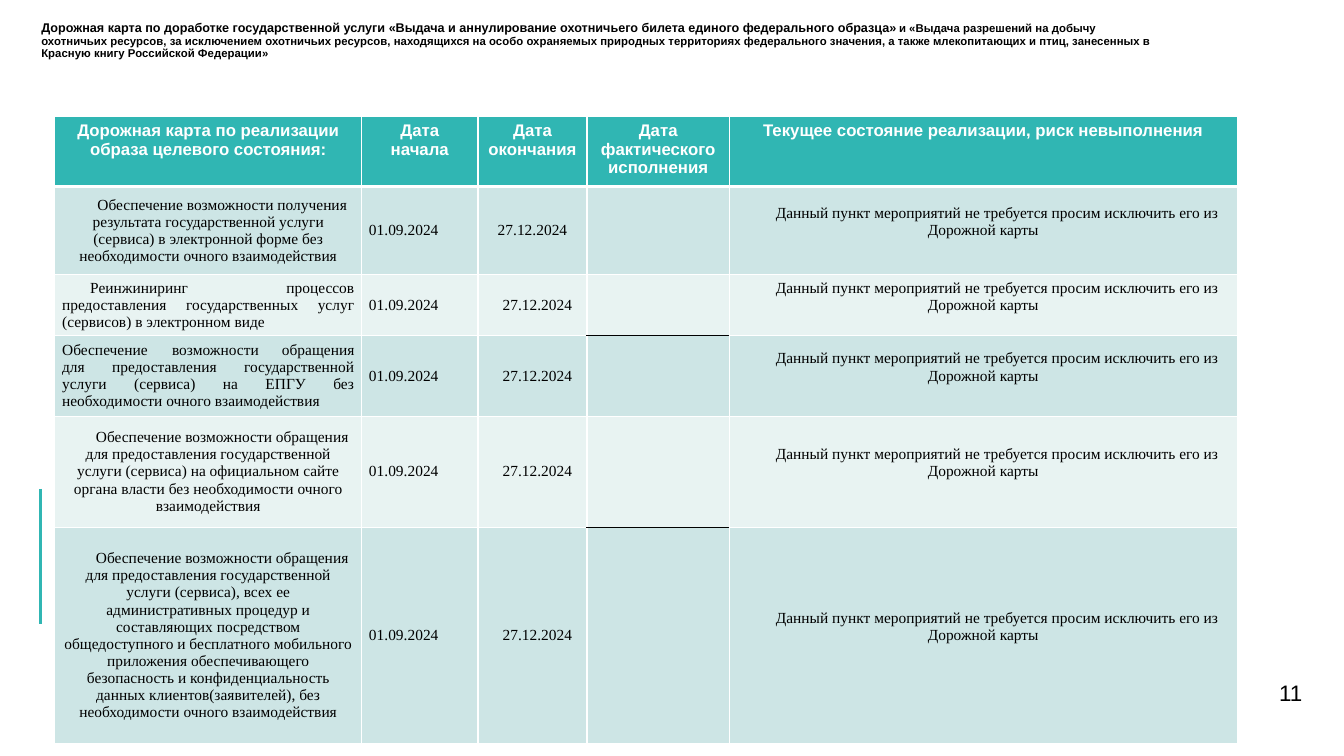
from lxml.etree import SubElement
from pptx import Presentation
from pptx.dml.color import RGBColor
from pptx.enum.shapes import MSO_CONNECTOR
from pptx.enum.text import MSO_ANCHOR, PP_ALIGN
from pptx.oxml.ns import qn
from pptx.util import Pt

TEAL = RGBColor(0x30, 0xB6, 0xB3)
BAND_DARK = RGBColor(0xCD, 0xE5, 0xE5)
BAND_LIGHT = RGBColor(0xE8, 0xF3, 0xF2)
WHITE = RGBColor(0xFF, 0xFF, 0xFF)
BLACK = RGBColor(0, 0, 0)
SANS, SERIF = "Arial", "Times New Roman"
LEFT, CENTER, RIGHT, JUSTIFY = (
    PP_ALIGN.LEFT, PP_ALIGN.CENTER, PP_ALIGN.RIGHT, PP_ALIGN.JUSTIFY)

TITLE = [
    ("Дорожная карта по доработке государственной услуги «Выдача и аннулирование "
     "охотничьего билета единого федерального образца»", 9),
    (" и «Выдача разрешений на добычу охотничьих ресурсов, за исключением охотничьих "
     "ресурсов, находящихся на особо охраняемых природных территориях федерального "
     "значения, а также млекопитающих и птиц, занесенных в Красную книгу Российской "
     "Федерации»", 8.1),
]
PAGE_NUMBER = "11"
HEADERS = [
    "Дорожная карта по реализации образа целевого состояния:",
    "Дата начала",
    "Дата окончания",
    "Дата фактического исполнения",
    "Текущее состояние реализации, риск невыполнения",
]
START, FINISH = "01.09.2024", "27.12.2024"
STATUS = "Данный пункт мероприятий не требуется просим исключить его из Дорожной карты"
# task, alignment, first-line indent of the task, first-line indent of the finish date
TASKS = [
    ("Обеспечение возможности получения результата государственной услуги (сервиса) "
     "в электронной форме без необходимости очного взаимодействия", CENTER, 20, 0),
    ("Реинжиниринг процессов предоставления государственных услуг (сервисов) "
     "в электронном виде", JUSTIFY, 20, 7),
    ("Обеспечение \tвозможности \tобращения для предоставления государственной услуги "
     "(сервиса) на ЕПГУ без необходимости очного взаимодействия", JUSTIFY, 0, 7),
    ("Обеспечение возможности обращения для предоставления государственной услуги "
     "(сервиса) на официальном сайте органа власти без необходимости очного "
     "взаимодействия", CENTER, 20, 7),
    ("Обеспечение возможности обращения для предоставления государственной услуги "
     "(сервиса), всех ее административных процедур и составляющих посредством "
     "общедоступного и бесплатного мобильного приложения обеспечивающего безопасность "
     "и конфиденциальность данных клиентов(заявителей), без необходимости очного "
     "взаимодействия", CENTER, 20, 7),
]
COLUMN_WIDTHS = [219.2, 83, 78, 101.6, 362.8]
ROW_HEIGHTS = [44.8, 63, 43.5, 57.6, 79.3, 154.8]
ACTUAL_DATE = 3
RULED_BELOW = (2, 4)  # rows with a black rule under the actual date
STATUS_LIFT = 12.4


def add_span(para, text, font, size, color, bold=False):
    span = para.add_run()
    span.text = text
    span.font.name, span.font.size, span.font.bold = font, Pt(size), bold
    span.font.color.rgb = color


def add_box(page, left, top, width, height, anchor):
    frame = page.shapes.add_textbox(Pt(left), Pt(top), Pt(width), Pt(height)).text_frame
    frame.word_wrap = True
    frame.vertical_anchor = anchor
    frame.margin_left = frame.margin_right = frame.margin_top = frame.margin_bottom = 0
    return frame.paragraphs[0]


def set_borders(cell, top, bottom):
    """Give white sides; top and bottom are (color, width) pairs."""
    properties = cell._tc.get_or_add_tcPr()
    side = (WHITE, 1)
    for tag, (color, width) in zip(("lnL", "lnR", "lnT", "lnB"), (side, side, top, bottom)):
        line = SubElement(properties, qn(f"a:{tag}"), w=str(Pt(width)))
        fill = SubElement(line, qn("a:solidFill"))
        SubElement(fill, qn("a:srgbClr"), val=str(color))


def style_cell(cell, row, column):
    rules = {row_above: (BLACK, 1) for row_above in RULED_BELOW if column == ACTUAL_DATE}
    rules[0] = (WHITE, 3)
    set_borders(cell, rules.get(row - 1, (WHITE, 1)), rules.get(row, (WHITE, 1)))
    cell.fill.solid()
    cell.fill.fore_color.rgb = TEAL if row == 0 else BAND_DARK if row % 2 else BAND_LIGHT


def fill_cell(cell, text, align, indent, lift=0):
    cell.vertical_anchor = MSO_ANCHOR.MIDDLE
    cell.margin_left = cell.margin_right = Pt(5.2)
    cell.margin_top, cell.margin_bottom = 0, Pt(lift)
    para = cell.text_frame.paragraphs[0]
    para.alignment = align
    para._p.get_or_add_pPr().set("indent", str(Pt(indent)))
    add_span(para, text, SERIF, 11, BLACK)


def add_roadmap(page):
    table = page.shapes.add_table(
        len(ROW_HEIGHTS), len(COLUMN_WIDTHS), Pt(39.2), Pt(82.8),
        Pt(sum(COLUMN_WIDTHS)), Pt(sum(ROW_HEIGHTS))).table
    for column, width in zip(table.columns, COLUMN_WIDTHS):
        column.width = Pt(width)
    for row, height in zip(table.rows, ROW_HEIGHTS):
        row.height = Pt(height)
    for row in range(len(ROW_HEIGHTS)):
        for column in range(len(COLUMN_WIDTHS)):
            style_cell(table.cell(row, column), row, column)
    for column, header in enumerate(HEADERS):
        para = table.cell(0, column).text_frame.paragraphs[0]
        para.alignment = CENTER
        add_span(para, header, SANS, 12, WHITE, True)
    for row, (task, align, indent, finish_indent) in enumerate(TASKS, 1):
        fill_cell(table.cell(row, 0), task, align, indent)
        fill_cell(table.cell(row, 1), START, LEFT, 0)
        fill_cell(table.cell(row, 2), FINISH, CENTER, finish_indent)
        fill_cell(table.cell(row, 4), STATUS, CENTER, 20, STATUS_LIFT)


def main():
    deck = Presentation()
    deck.slide_width, deck.slide_height = Pt(960), Pt(540)
    page = deck.slides.add_slide(deck.slide_layouts[6])

    title = add_box(page, 29.5, 15.8, 795.6, 28, MSO_ANCHOR.TOP)
    title.line_spacing = 0.9
    for text, size in TITLE:
        add_span(title, text, SANS, size, BLACK, True)

    number = add_box(page, 854, 479.5, 76.3, 31, MSO_ANCHOR.MIDDLE)
    number.alignment = RIGHT
    add_span(number, PAGE_NUMBER, SANS, 16, BLACK)

    accent = page.shapes.add_connector(
        MSO_CONNECTOR.STRAIGHT, Pt(29.2), Pt(349.2), Pt(29.2), Pt(445.7))
    accent.line.color.rgb = TEAL
    accent.line.width = Pt(2.25)
    SubElement(accent._element.spPr, qn("a:effectLst"))

    add_roadmap(page)
    deck.save("out.pptx")


if __name__ == "__main__":
    main()
